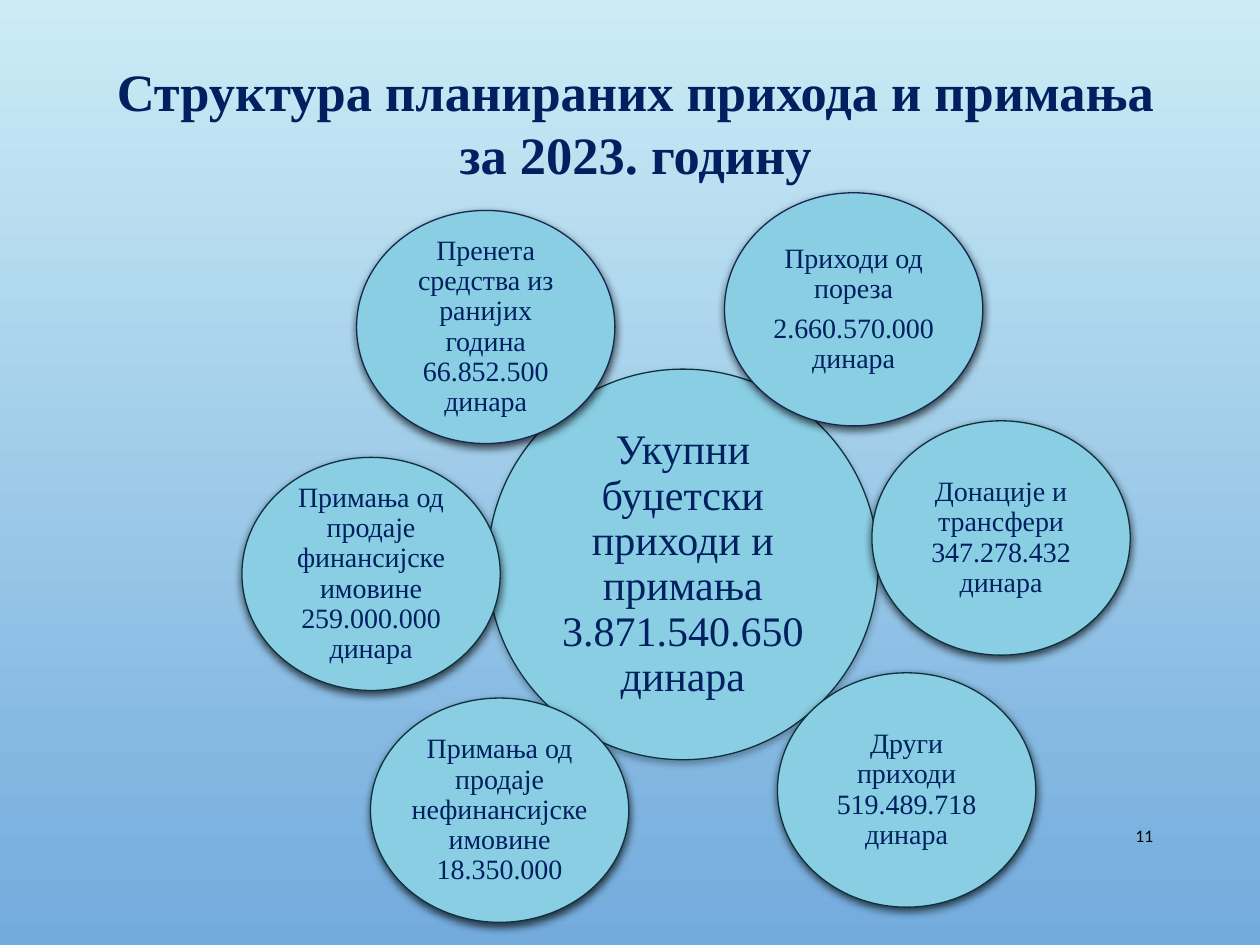
from lxml.etree import SubElement
from pptx import Presentation
from pptx.dml.color import RGBColor
from pptx.enum.shapes import MSO_SHAPE
from pptx.enum.text import MSO_ANCHOR, MSO_AUTO_SIZE, PP_ALIGN
from pptx.oxml.ns import qn
from pptx.util import Inches, Pt

COLORS = {"top": "CBECF5", "base": "73ABDD", "fill": "8ACEE4", "edge": "0E323D",
          "dark": "142852", "text": "002060", "black": "000000"}
SERIF = "Times New Roman"

# Left, top, height, edge colour and paragraphs of each outer circle
PARTS = [
    (5.75, 1.53, 1.85, "dark", ["Приходи од пореза", "2.660.570.000 динара"]),
    (6.92, 3.34, 1.86, "edge", ["Донације и трансфери 347.278.432 динара"]),
    (6.17, 5.34, 1.86, "edge", ["Други приходи 519.489.718 динара"]),
    (2.94, 5.54, 1.78, "edge",
     ["Примања од продаје нефинансијске имовине 18.350.000"]),
    (1.92, 3.63, 1.85, "edge",
     ["Примања од продаје финансијске имовине 259.000.000 динара"]),
    (2.83, 1.67, 1.85, "dark",
     ["Пренета средства из ранијих година 66.852.500 динара"]),
]


def color(name):
    return RGBColor.from_string(COLORS[name])


def style(para, size, align, name="text", face=SERIF, bold=False):
    para.alignment = align
    font = para.font
    font.size, font.name, font.bold = Pt(size), face, bold
    font.color.rgb = color(name)


def add_shadow(shape, alpha, blur, dist):
    shape.shadow.inherit = False
    effects = shape._element.spPr.find(qn("a:effectLst"))
    outer = SubElement(effects, qn("a:outerShdw"), blurRad=str(Pt(blur)),
                       dist=str(Pt(dist)), dir="5400000", rotWithShape="0")
    tint = SubElement(outer, qn("a:srgbClr"), val=COLORS["black"])
    SubElement(tint, qn("a:alpha"), val=str(alpha * 1000))


def add_circle(slide, box, edge, lines, size, inset, shadow):
    shape = slide.shapes.add_shape(MSO_SHAPE.OVAL, *map(Inches, box))
    shape.fill.solid()
    shape.fill.fore_color.rgb = color("fill")
    shape.line.color.rgb = color(edge)
    shape.line.width = Pt(0.75)
    add_shadow(shape, *shadow)

    frame = shape.text_frame
    frame.word_wrap = True
    frame.vertical_anchor = MSO_ANCHOR.MIDDLE
    frame.margin_left = frame.margin_right = Inches(inset)
    frame.margin_top = frame.margin_bottom = Inches(inset)
    frame.text = "\n".join(lines)
    for para in frame.paragraphs:
        para.line_spacing = 0.9
        para.space_after = Pt(size * 0.35)
        style(para, size, PP_ALIGN.CENTER)


def add_title(slide, text):
    title = slide.shapes.title
    title.left, title.top = Inches(0.67), Inches(0.42)
    title.width, title.height = Inches(8.75), Inches(1.11)
    frame = title.text_frame
    frame.text = text
    frame.word_wrap = True
    frame.auto_size = MSO_AUTO_SIZE.SHAPE_TO_FIT_TEXT
    frame.vertical_anchor = MSO_ANCHOR.TOP
    style(frame.paragraphs[0], 30, PP_ALIGN.CENTER, bold=True)


def add_number(slide, text):
    box = slide.shapes.add_textbox(*map(Inches, (8.62, 6.43, 0.63, 0.4)))
    frame = box.text_frame
    frame.word_wrap = True
    frame.vertical_anchor = MSO_ANCHOR.MIDDLE
    frame.text = text
    style(frame.paragraphs[0], 10, PP_ALIGN.RIGHT, "black", "Calibri")


def paint_back(slide):
    fill = slide.background.fill
    fill.gradient()
    fill.gradient_angle = 270
    for stop, name, place in zip(fill.gradient_stops, ("top", "base"), (0, 1)):
        stop.color.rgb = color(name)
        stop.position = place


def main():
    deck = Presentation()
    deck.slide_width, deck.slide_height = Inches(10), Inches(7.5)
    slide = deck.slides.add_slide(deck.slide_layouts[5])
    paint_back(slide)

    # Title and slide number
    add_title(slide, "Структура планираних прихода и примања за 2023. годину")
    add_number(slide, "11")

    # Total in the middle, its sources around it
    total = ["Укупни буџетски приходи и примања 3.871.540.650 динара"]
    add_circle(slide, (3.87, 2.93, 3.1, 3.1), "edge", total, 24, 0.03, (28, 4, 2))
    for left, top, height, edge, lines in PARTS:
        add_circle(slide, (left, top, 2.05, height), edge, lines, 16, 0.02,
                   (69, 5, 2))

    deck.save("out.pptx")


if __name__ == "__main__":
    main()
